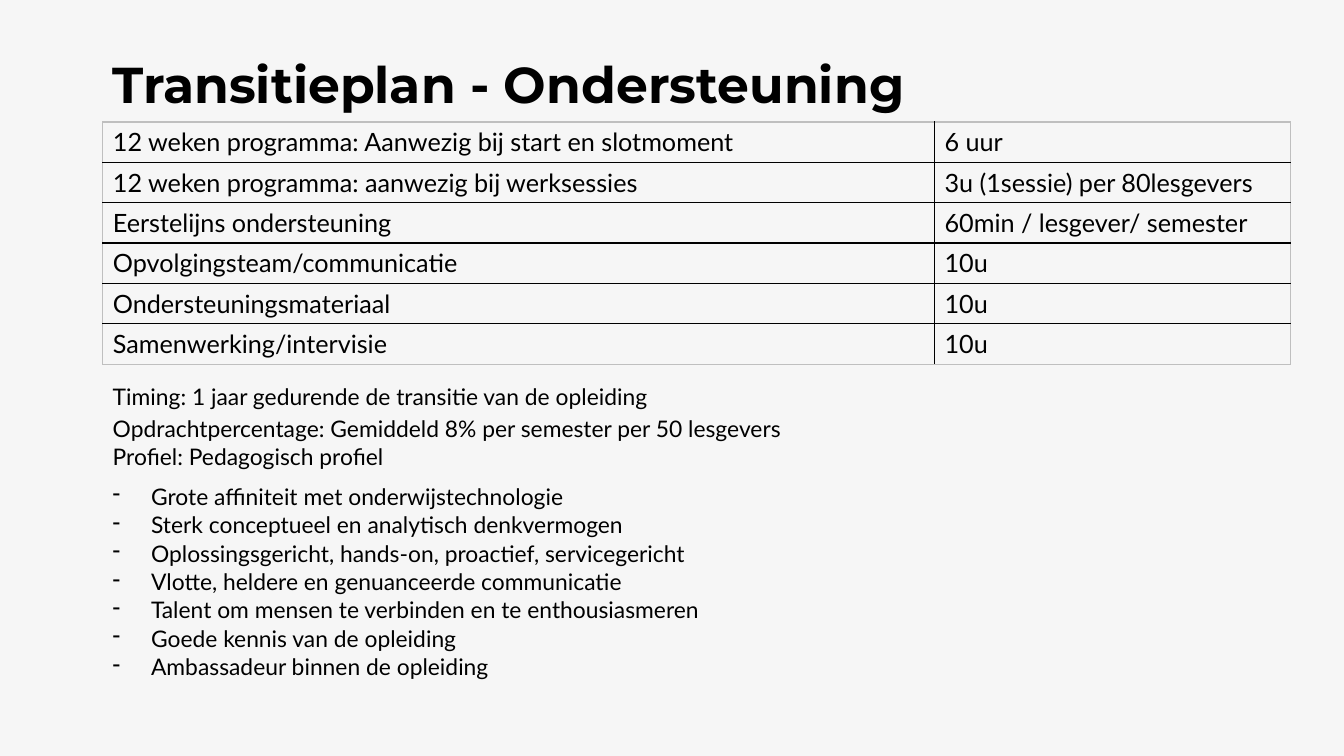
from dataclasses import dataclass

from lxml.etree import SubElement
from pptx import Presentation
from pptx.dml.color import RGBColor
from pptx.enum.text import MSO_ANCHOR, PP_ALIGN
from pptx.oxml import parse_xml
from pptx.oxml.ns import nsdecls, qn
from pptx.util import Inches, Pt


@dataclass(frozen=True)
class Theme:
    background: str = "F6F6F6"
    ink: str = "000000"
    frame: str = "BFBFBF"
    heading_font: str = "Montserrat"
    body_font: str = "Lato"
    title_size: float = 36
    table_size: float = 18
    body_size: float = 16.3
    border_width: float = 1


@dataclass(frozen=True)
class Support:
    task: str
    effort: str


@dataclass(frozen=True)
class Line:
    text: str
    bullet: bool = False
    spacing: float = 0.87
    after: float = 0


THEME = Theme()

# The grid has 100 columns and 100 rows
SLIDE_WIDTH, SLIDE_HEIGHT = Inches(13.33), Inches(7.5)
LEFT = 7.65
TABLE_COLUMNS = (61.88, 26.47)
TABLE_ROW = 5.33

SUPPORTS = [
    Support("12 weken programma: Aanwezig bij start en slotmoment", "6 uur"),
    Support("12 weken programma: aanwezig bij werksessies", "3u (1sessie) per 80lesgevers"),
    Support("Eerstelijns ondersteuning", "60min / lesgever/ semester"),
    Support("Opvolgingsteam/communicatie", "10u"),
    Support("Ondersteuningsmateriaal", "10u"),
    Support("Samenwerking/intervisie", "10u"),
]

LINES = [
    Line("Timing: 1 jaar gedurende de transitie van de opleiding", spacing=1),
    Line("Opdrachtpercentage: Gemiddeld 8% per semester per 50 lesgevers", spacing=1),
    Line("Profiel: Pedagogisch profiel", after=8),
    Line("Grote affiniteit met onderwijstechnologie", bullet=True),
    Line("Sterk conceptueel en analytisch denkvermogen", bullet=True),
    Line("Oplossingsgericht, hands-on, proactief, servicegericht", bullet=True),
    Line("Vlotte, heldere en genuanceerde communicatie", bullet=True),
    Line("Talent om mensen te verbinden en te enthousiasmeren", bullet=True),
    Line("Goede kennis van de opleiding", bullet=True),
    Line("Ambassadeur binnen de opleiding", bullet=True, after=8),
]


def across(columns: float) -> int:
    return round(SLIDE_WIDTH * columns / 100)


def down(rows: float) -> int:
    return round(SLIDE_HEIGHT * rows / 100)


def write(paragraph, text: str, *, size: float, font: str = THEME.body_font,
          bold: bool = False, spacing: float = 1, before: float = 0,
          after: float = 0, bullet: bool = False) -> None:
    """Put formatted text in a paragraph."""
    paragraph.alignment = PP_ALIGN.LEFT
    paragraph.line_spacing = spacing
    paragraph.space_before = Pt(before)
    paragraph.space_after = Pt(after)
    if bullet:
        properties = paragraph._p.get_or_add_pPr()
        properties.set("marL", str(Inches(0.38)))
        properties.set("indent", str(-Inches(0.38)))
        SubElement(properties, qn("a:buChar")).set("char", "-")
    run = paragraph.add_run()
    run.text = text
    run.font.name = font
    run.font.size = Pt(size)
    run.font.bold = bold
    run.font.color.rgb = RGBColor.from_string(THEME.ink)


def set_borders(cell, colors: dict[str, str]) -> None:
    """Draw cell borders; the sides come in the order L, R, T, B."""
    properties = cell._tc.get_or_add_tcPr()
    for position, (side, color) in enumerate(colors.items()):
        properties.insert(position, parse_xml(
            f'<a:ln{side} {nsdecls("a")} w="{Pt(THEME.border_width)}">'
            f'<a:solidFill><a:srgbClr val="{color}"/></a:solidFill></a:ln{side}>'))


def add_title(slide, text: str) -> None:
    title = slide.shapes.title
    title.left, title.top = across(LEFT), down(6.4)
    title.width, title.height = across(90.85), down(22.67)
    frame = title.text_frame
    frame.vertical_anchor = MSO_ANCHOR.TOP
    frame.word_wrap = True
    write(frame.paragraphs[0], text, size=THEME.title_size,
          font=THEME.heading_font, bold=True)


def add_support_table(slide, supports: list[Support]) -> None:
    last_row, last_column = len(supports) - 1, len(TABLE_COLUMNS) - 1
    table = slide.shapes.add_table(
        len(supports), len(TABLE_COLUMNS), across(LEFT), down(16.13),
        across(sum(TABLE_COLUMNS)), down(TABLE_ROW * len(supports))).table
    table.first_row = table.horz_banding = False
    for column, width in zip(table.columns, TABLE_COLUMNS):
        column.width = across(width)
    for row, support in enumerate(supports):
        table.rows[row].height = down(TABLE_ROW)
        for column, text in enumerate((support.task, support.effort)):
            cell = table.cell(row, column)
            cell.fill.background()
            cell.vertical_anchor = MSO_ANCHOR.TOP
            write(cell.text_frame.paragraphs[0], text, size=THEME.table_size)
            outer = {"L": column == 0, "R": column == last_column,
                     "T": row == 0, "B": row == last_row}
            set_borders(cell, {side: THEME.frame if is_outer else THEME.ink
                               for side, is_outer in outer.items()})


def add_profile(slide, lines: list[Line]) -> None:
    frame = slide.shapes.add_textbox(
        across(LEFT), down(50), across(86.8), down(41.6)).text_frame
    frame.word_wrap = True
    for index, line in enumerate(lines):
        paragraph = frame.add_paragraph() if index else frame.paragraphs[0]
        write(paragraph, line.text, size=THEME.body_size, spacing=line.spacing,
              before=0.2 * THEME.body_size if index else 0,
              after=line.after, bullet=line.bullet)


def main() -> None:
    presentation = Presentation()
    presentation.slide_width, presentation.slide_height = SLIDE_WIDTH, SLIDE_HEIGHT
    slide = presentation.slides.add_slide(presentation.slide_layouts[5])

    # Background
    slide.background.fill.solid()
    slide.background.fill.fore_color.rgb = RGBColor.from_string(THEME.background)

    # Title, table of support hours, timing and profile
    add_title(slide, "Transitieplan - Ondersteuning")
    add_profile(slide, LINES)
    add_support_table(slide, SUPPORTS)

    presentation.save("out.pptx")


if __name__ == "__main__":
    main()
